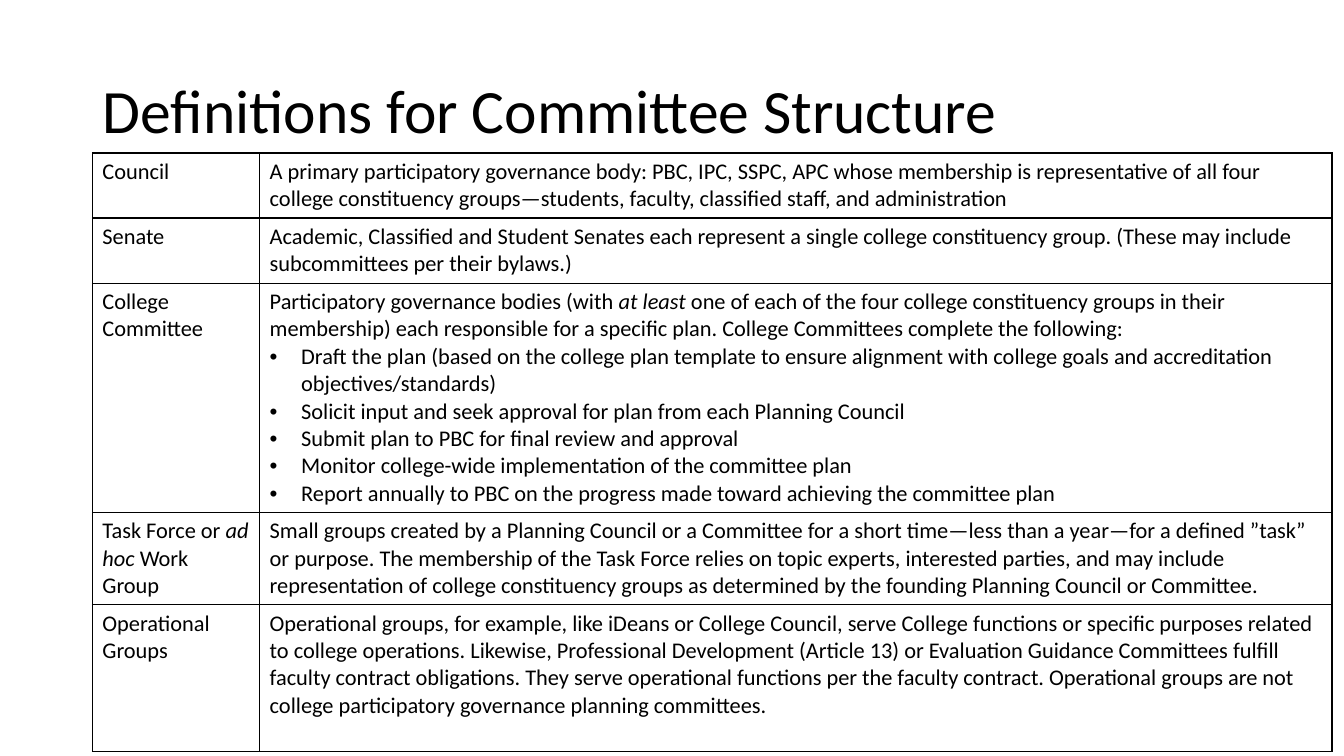
from dataclasses import dataclass

from lxml import etree
from pptx import Presentation
from pptx.dml.color import RGBColor
from pptx.enum.text import MSO_ANCHOR, MSO_AUTO_SIZE, PP_ALIGN
from pptx.oxml.ns import qn
from pptx.util import Pt

LEFT = PP_ALIGN.LEFT
TOP = MSO_ANCHOR.TOP
MIDDLE = MSO_ANCHOR.MIDDLE
NO_AUTOFIT = MSO_AUTO_SIZE.NONE
TITLE_ONLY = 5
BULLET = "• "

TITLE = "Definitions for Committee Structure"
DEFINITIONS = [
    (46.5, "Council", [
        "A primary participatory governance body: PBC, IPC, SSPC, APC whose membership is "
        "representative of all four college constituency groups—students, faculty, "
        "classified staff, and administration"]),
    (46.5, "Senate", [
        "Academic, Classified and Student Senates each represent a single college "
        "constituency group. (These may include subcommittees per their bylaws.)"]),
    (163.5, "College Committee", [
        "Participatory governance bodies (with *at least* one of each of the four college "
        "constituency groups in their membership) each responsible for a specific plan. "
        "College Committees complete the following:",
        "• Draft the plan (based on the college plan template to ensure alignment with "
        "college goals and accreditation objectives/standards)",
        "• Solicit input and seek approval for plan from each Planning Council",
        "• Submit plan to PBC for final review and approval",
        "• Monitor college-wide implementation of the committee plan",
        "• Report annually to PBC on the progress made toward achieving the committee plan"]),
    (66, "Task Force or *ad hoc* Work Group", [
        "Small groups created by a Planning Council or a Committee for a short time—less "
        "than a year—for a defined ”task” or purpose. The membership of the Task Force "
        "relies on topic experts, interested parties, and may include representation of "
        "college constituency groups as determined by the founding Planning Council or "
        "Committee."]),
    (105, "Operational Groups", [
        "Operational groups, for example, like iDeans or College Council, serve College "
        "functions or specific purposes related to college operations. Likewise, "
        "Professional Development (Article 13) or Evaluation Guidance Committees fulfill "
        "faculty contract obligations. They serve operational functions per the faculty "
        "contract. Operational groups are not college participatory governance planning "
        "committees."]),
]


@dataclass(frozen=True)
class Theme:
    """Hold the colours, font and sizes of the slide."""

    font: str = "Calibri"
    ink: str = "000000"
    title_size: float = 44
    body_size: float = 16
    border_width: float = 1
    bullet_indent: float = 22.5


def write_text(paragraph, text, *, font, size, color, line_spacing=1.0):
    """Write text into a paragraph, with *starred* parts in italics."""
    paragraph.alignment = LEFT
    paragraph.line_spacing = line_spacing
    for index, part in enumerate(text.split("*")):
        if part:
            run = paragraph.add_run()
            run.text = part
            run.font.name = font
            run.font.size = Pt(size)
            run.font.color.rgb = RGBColor.from_string(color)
            run.font.italic = index % 2 == 1


class SlideBuilder:
    """Draw styled elements on the current slide."""

    def __init__(self, slide, theme):
        """Keep the slide and its theme."""
        self.slide = slide
        self.theme = theme

    def title(self, text, left, top, width, height):
        """Place and fill the title placeholder."""
        shape = self.slide.shapes.title
        shape.left, shape.top = Pt(left), Pt(top)
        shape.width, shape.height = Pt(width), Pt(height)
        frame = shape.text_frame
        frame.word_wrap = True
        frame.auto_size = NO_AUTOFIT
        frame.vertical_anchor = MIDDLE
        write_text(frame.paragraphs[0], text, font=self.theme.font,
                   size=self.theme.title_size, color=self.theme.ink, line_spacing=0.9)

    def bullet(self, paragraph):
        """Give a paragraph a hanging bullet."""
        indent = Pt(self.theme.bullet_indent)
        properties = paragraph._p.get_or_add_pPr()
        properties.set("marL", str(indent))
        properties.set("indent", str(-indent))
        etree.SubElement(properties, qn("a:buFont"), typeface="Arial")
        etree.SubElement(properties, qn("a:buChar"), char=BULLET.strip())

    def borders(self, cell):
        """Draw a line on all four sides of a cell."""
        properties = cell._tc.get_or_add_tcPr()
        for index, side in enumerate(("lnL", "lnR", "lnT", "lnB")):
            line = etree.Element(qn(f"a:{side}"), w=str(Pt(self.theme.border_width)))
            fill = etree.SubElement(line, qn("a:solidFill"))
            etree.SubElement(fill, qn("a:srgbClr"), val=self.theme.ink)
            properties.insert(index, line)

    def cell(self, cell, texts):
        """Fill a table cell with one paragraph per text."""
        cell.fill.background()
        cell.vertical_anchor = TOP
        self.borders(cell)
        frame = cell.text_frame
        for index, text in enumerate(texts):
            paragraph = frame.add_paragraph() if index else frame.paragraphs[0]
            write_text(paragraph, text.removeprefix(BULLET), font=self.theme.font,
                       size=self.theme.body_size, color=self.theme.ink)
            if text.startswith(BULLET):
                self.bullet(paragraph)

    def table(self, definitions, left, top, column_widths):
        """Add the table of terms and their definitions."""
        height = sum(row_height for row_height, _, _ in definitions)
        table = self.slide.shapes.add_table(
            len(definitions), len(column_widths), Pt(left), Pt(top),
            Pt(sum(column_widths)), Pt(height)).table
        table.first_row = False
        table.horz_banding = False
        for column, width in zip(table.columns, column_widths):
            column.width = Pt(width)
        for index, (row_height, term, meaning) in enumerate(definitions):
            table.rows[index].height = Pt(row_height)
            self.cell(table.cell(index, 0), [term])
            self.cell(table.cell(index, 1), meaning)


def main():
    """Build and save the presentation."""
    presentation = Presentation()
    presentation.slide_width, presentation.slide_height = Pt(960), Pt(540)
    slide = presentation.slides.add_slide(presentation.slide_layouts[TITLE_ONLY])
    builder = SlideBuilder(slide, Theme())
    builder.title(TITLE, 66, 28.75, 828, 104.5)
    builder.table(DEFINITIONS, 66, 109.25, (119.5, 766))
    presentation.save("out.pptx")


if __name__ == "__main__":
    main()
